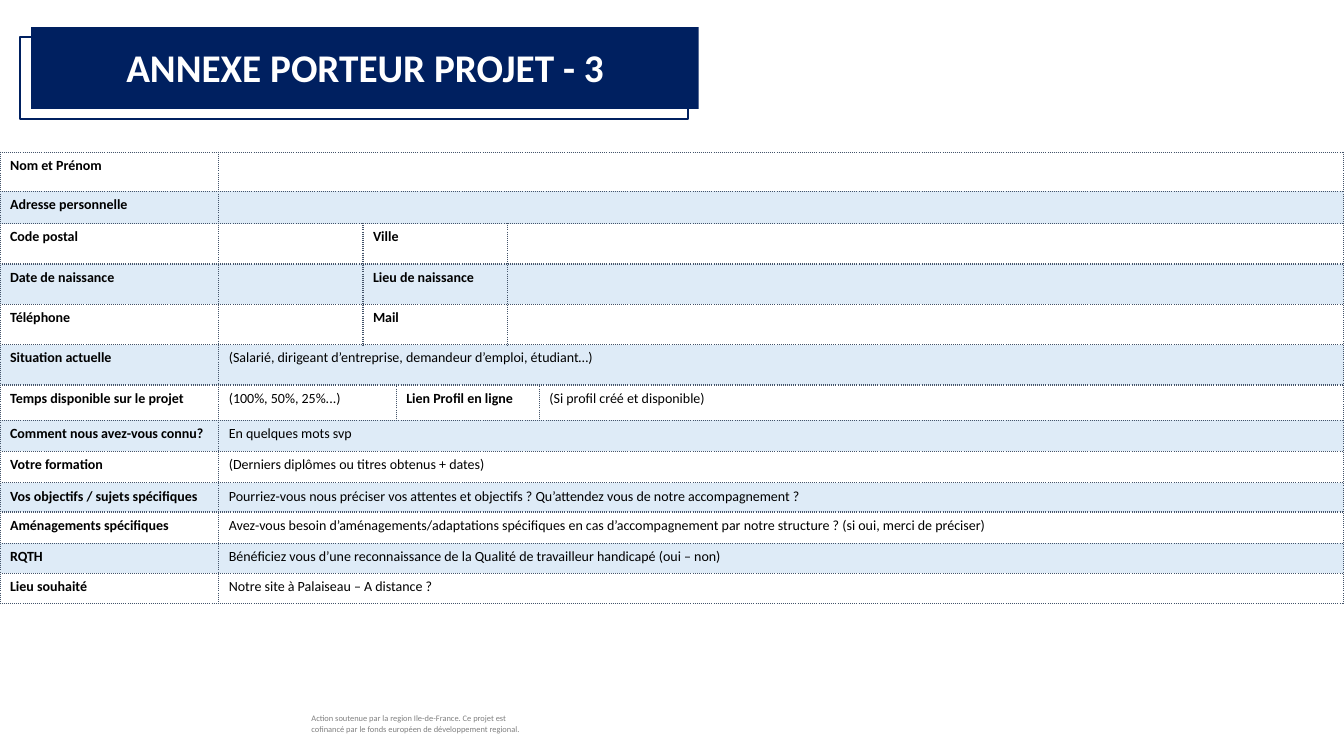
"""Build the project holder form slide."""
import dataclasses

import lxml.etree
import pptx
import pptx.dml.color
import pptx.enum.shapes
import pptx.enum.text
import pptx.oxml.ns
import pptx.util


@dataclasses.dataclass(frozen=True)
class Theme:
    """Hold the colours, font and sizes."""
    face: str = "Calibri"
    navy: str = "002060"
    band: str = "DEEBF7"
    rule: str = "44546A"
    ink: str = "000000"
    white: str = "FFFFFF"
    grey: str = "808080"
    title: int = 28
    body: int = 10
    note: int = 6


LOOK = Theme()
WIDE, HIGH = 1333, 750
COLS = [217, 143, 33, 110, 32, 798]
ROWS = [39, 32, 40, 40, 40, 40, 35, 31, 31, 29, 31, 30, 30]
FULL, PAIR, LINK = (1, 5), (1, 1, 2, 2), (1, 2, 2, 1)
FORM = [
    (FULL, "Nom et Prénom", ""),
    (FULL, "Adresse personnelle", ""),
    (PAIR, "Code postal", "", "Ville", ""),
    (PAIR, "Date de naissance", "", "Lieu de naissance", ""),
    (PAIR, "Téléphone", "", "Mail", ""),
    (FULL, "Situation actuelle",
     "(Salarié, dirigeant d’entreprise, demandeur d’emploi, étudiant…)"),
    (LINK, "Temps disponible sur le projet", "(100%, 50%, 25%...)",
     "Lien Profil en ligne", "(Si profil créé et disponible)"),
    (FULL, "Comment nous avez-vous connu?", "En quelques mots svp"),
    (FULL, "Votre formation", "(Derniers diplômes ou titres obtenus + dates)"),
    (FULL, "Vos objectifs / sujets spécifiques",
     "Pourriez-vous nous préciser vos attentes et objectifs ? "
     "Qu’attendez vous de notre accompagnement ?"),
    (FULL, "Aménagements spécifiques",
     "Avez-vous besoin d’aménagements/adaptations spécifiques en cas "
     "d’accompagnement par notre structure ? (si oui, merci de préciser)"),
    (FULL, "RQTH",
     "Bénéficiez vous d’une reconnaissance de la Qualité de travailleur "
     "handicapé (oui – non)"),
    (FULL, "Lieu souhaité", "Notre site à Palaiseau – A distance ?"),
]


def unit(count):
    """Turn grid steps into a length."""
    return pptx.util.Inches(count / 100)


def paint(fill, tone):
    """Fill with a plain colour, or with none."""
    if tone:
        fill.solid()
        fill.fore_color.rgb = pptx.dml.color.RGBColor.from_string(tone)
    else:
        fill.background()


def write(frame, text, size, tone, bold=False, align=None):
    """Put one styled paragraph in a text frame."""
    para = frame.paragraphs[0]
    para.alignment = align
    run = para.add_run()
    run.text = text
    style = {"name": LOOK.face, "size": pptx.util.Pt(size), "bold": bold}
    for key, value in style.items():
        setattr(run.font, key, value)
    run.font.color.rgb = pptx.dml.color.RGBColor.from_string(tone)


def label(slide, area, text, size, tone, **style):
    """Add a wrapped text box."""
    frame = slide.shapes.add_textbox(*map(unit, area)).text_frame
    frame.word_wrap = True
    write(frame, text, size, tone, **style)


def panel(slide, area, tone=None, line=None):
    """Add a filled or outlined rectangle."""
    kind = pptx.enum.shapes.MSO_SHAPE.RECTANGLE
    shape = slide.shapes.add_shape(kind, *map(unit, area))
    shape.shadow.inherit = False
    paint(shape.fill, tone)
    paint(shape.line.fill, line)
    if line:
        shape.line.width = pptx.util.Pt(1.5)


def border(cell):
    """Draw dotted lines round a cell."""
    name = pptx.oxml.ns.qn
    add = lxml.etree.SubElement
    props = cell._tc.get_or_add_tcPr()
    for side in "LRTB":
        edge = add(props, name(f"a:ln{side}"), w=str(pptx.util.Pt(1)))
        fill = add(edge, name("a:solidFill"))
        add(fill, name("a:srgbClr"), val=LOOK.rule)
        add(edge, name("a:prstDash"), val="sysDot")


def entry(cell, text, bold):
    """Write a form cell, or size its blank line."""
    if text:
        write(cell.text_frame, text, LOOK.body, LOOK.ink, bold)
    else:
        para = cell.text_frame.paragraphs[0]._p
        tag = pptx.oxml.ns.qn("a:endParaRPr")
        lxml.etree.SubElement(para, tag, sz=str(LOOK.body * 100))


def form(slide, left, top):
    """Add the form table with its merged cells."""
    area = (left, top, sum(COLS), sum(ROWS))
    frame = slide.shapes.add_table(len(ROWS), len(COLS), *map(unit, area))
    table = frame.table
    flags = {"first_row": False, "horz_banding": False}
    for key, value in flags.items():
        setattr(table, key, value)
    for col, width in zip(table.columns, COLS):
        col.width = unit(width)
    for row, height in zip(table.rows, ROWS):
        row.height = unit(height)
    for r, (spans, *texts) in enumerate(FORM):
        for cell in table.rows[r].cells:
            border(cell)
            paint(cell.fill, LOOK.band if r % 2 else None)
        c = 0
        for i, (span, text) in enumerate(zip(spans, texts)):
            cell = table.cell(r, c)
            if span > 1:
                cell.merge(table.cell(r, c + span - 1))
            entry(cell, text, bold=i % 2 == 0)
            c += span


def main():
    """Build and save the slide."""
    deck = pptx.Presentation()
    size = {"slide_width": unit(WIDE), "slide_height": unit(HIGH)}
    for key, value in size.items():
        setattr(deck, key, value)
    slide = deck.slides.add_slide(deck.slide_layouts[6])
    label(slide, (299, 703, 238, 30),
          "Action soutenue par la region Ile-de-France. Ce projet est "
          "cofinancé par le fonds européen de développement regional.",
          LOOK.note, LOOK.grey)
    form(slide, 0, 151)
    panel(slide, (20, 37, 662, 81), line=LOOK.navy)
    panel(slide, (31, 27, 662, 81), tone=LOOK.navy)
    label(slide, (31, 38, 662, 57), "ANNEXE PORTEUR PROJET - 3",
          LOOK.title, LOOK.white, bold=True,
          align=pptx.enum.text.PP_ALIGN.CENTER)
    deck.save("out.pptx")


if __name__ == "__main__":
    main()
